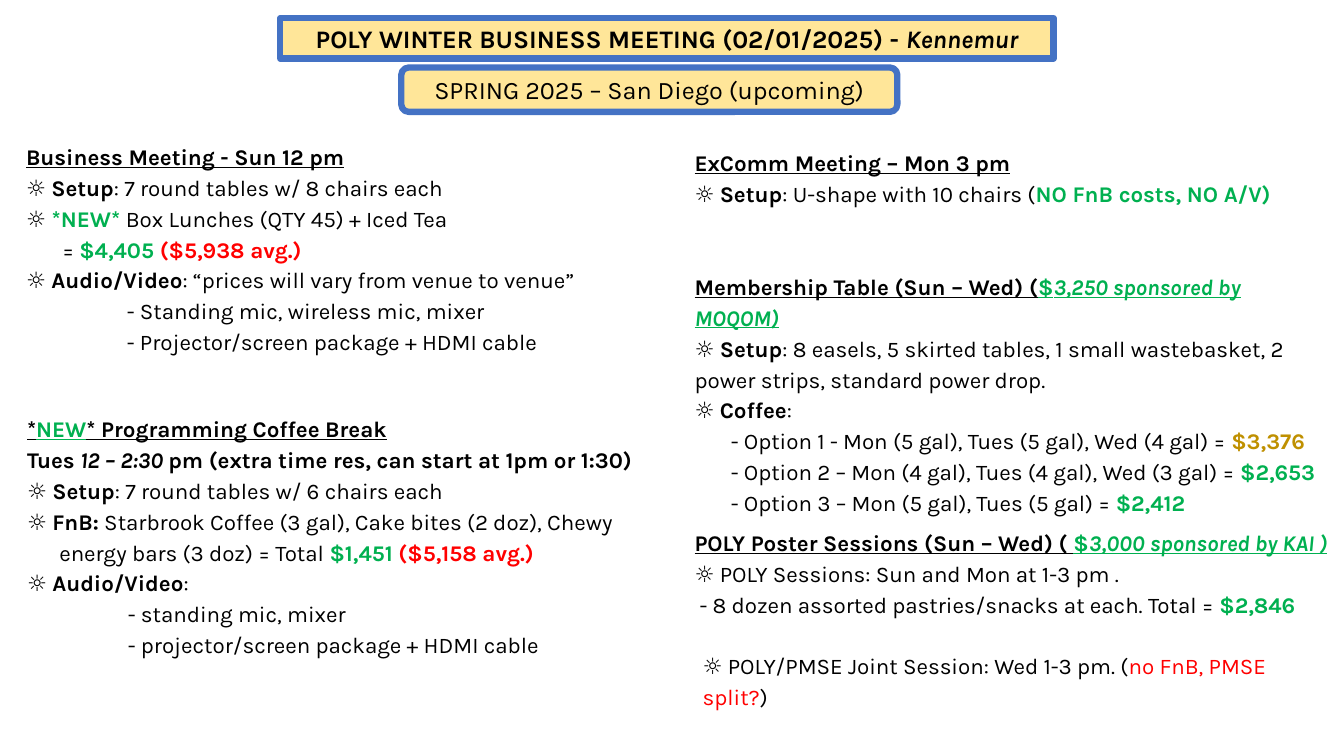
from lxml import etree
from pptx import Presentation
from pptx.dml.color import RGBColor
from pptx.enum.shapes import MSO_SHAPE
from pptx.enum.text import MSO_ANCHOR, MSO_AUTO_SIZE, PP_ALIGN
from pptx.oxml.ns import qn
from pptx.util import Inches, Pt

FONT = "Karla"
BLACK = RGBColor(0x00, 0x00, 0x00)
GREEN = RGBColor(0x00, 0xB0, 0x50)
RED = RGBColor(0xFF, 0x00, 0x00)
GOLD = RGBColor(0xBF, 0x90, 0x00)
CREAM = RGBColor(0xFF, 0xE6, 0x99)
BLUE = RGBColor(0x44, 0x72, 0xC4)

COST_INDENT = 0.36
WRAP_INDENT = 0.32
EQUIPMENT_INDENT = 1.0
SNACK_INDENT = 0.05
JOINT_INDENT = 0.08
SECTION_GAP = 22


def line(*runs, indent=0, before=0):
    """One line of a section; each run is (text, style letters b/i/u, colour)."""
    return runs, indent, before


def setup(details, *more_runs):
    return line(("☼ ", ""), ("Setup", "b"), (": " + details, ""), *more_runs)


def equipment(text):
    return line(("- " + text, ""), indent=EQUIPMENT_INDENT)


def coffee_option(text, price, colour=GREEN):
    return line((f"- {text} = ", ""), (price, "b", colour), indent=COST_INDENT)


BUSINESS_MEETING = [
    line(("Business Meeting - Sun 12 pm", "bu")),
    setup("7 round tables w/ 8 chairs each"),
    line(("☼ ", "b"), ("*NEW* ", "b", GREEN), ("Box Lunches (QTY 45) + Iced Tea", "")),
    line(("= ", ""), ("$4,405 ", "b", GREEN), ("($5,938 avg.)", "b", RED),
         indent=COST_INDENT),
    line(("☼ ", ""), ("Audio/Video", "b"),
         (": “prices will vary from venue to venue”", "")),
    equipment("Standing mic, wireless mic, mixer"),
    equipment("Projector/screen package + HDMI cable"),
]

COFFEE_BREAK = [
    line(("*", "bu"), ("NEW", "bu", GREEN), ("* Programming Coffee Break", "bu")),
    line(("Tues ", "b"), ("12 – 2:30 ", "bi"),
         ("pm (extra time res, can start at 1pm or 1:30)", "b")),
    setup("7 round tables w/ 6 chairs each"),
    line(("☼ ", ""), ("FnB:", "b"),
         (" Starbrook Coffee (3 gal), Cake bites (2 doz), Chewy", "")),
    line(("energy bars (3 doz) = Total ", ""), ("$1,451 ", "b", GREEN),
         ("($5,158 avg.)", "b", RED), indent=WRAP_INDENT),
    line(("☼ ", ""), ("Audio/Video", "b"), (":", "")),
    equipment("standing mic, mixer"),
    equipment("projector/screen package + HDMI cable"),
]

EXCOMM_MEETING = [
    line(("ExComm Meeting – Mon 3 pm", "bu")),
    setup("U-shape with 10 chairs (", ("NO FnB costs, NO A/V)", "b", GREEN)),
]

MEMBERSHIP_TABLE = [
    line(("Membership Table (Sun – Wed) (", "bu"), ("$", "bu", GREEN),
         ("3,250 sponsored by MOQOM)", "biu", GREEN)),
    setup("8 easels, 5 skirted tables, 1 small wastebasket, 2 power strips, "
          "standard power drop."),
    line(("☼ ", ""), ("Coffee", "b"), (":", "")),
    coffee_option("Option 1 - Mon (5 gal), Tues (5 gal), Wed (4 gal)", "$3,376", GOLD),
    coffee_option("Option 2 – Mon (4 gal), Tues (4 gal), Wed (3 gal)", "$2,653"),
    coffee_option("Option 3 – Mon (5 gal), Tues (5 gal)", "$2,412"),
]

POSTER_SESSIONS = [
    line(("POLY Poster Sessions (Sun – Wed) ( ", "bu"), ("$", "bu", GREEN),
         ("3,000 sponsored by KAI )", "biu", GREEN)),
    line(("☼ POLY Sessions: Sun and Mon at 1-3 pm .", "")),
    line(("- 8 dozen assorted pastries/snacks at each. Total = ", ""),
         ("$2,846", "b", GREEN), indent=SNACK_INDENT),
    line(("☼ POLY/PMSE Joint Session: Wed 1-3 pm. (", ""),
         ("no FnB, PMSE split?", "", RED), (")", ""),
         indent=JOINT_INDENT, before=SECTION_GAP),
]


def add_run(paragraph, size, text, style, colour=BLACK):
    run = paragraph.add_run()
    run.text = text
    font = run.font
    font.name, font.size, font.color.rgb = FONT, Pt(size), colour
    font.bold, font.italic, font.underline = (mark in style for mark in "biu")


def place(shape, left, top, width, height):
    shape.left, shape.top = Inches(left), Inches(top)
    shape.width, shape.height = Inches(width), Inches(height)


def round_corners(placeholder):
    """Give a placed placeholder the rounded rectangle outline."""
    geometry = etree.SubElement(placeholder.element.spPr, qn("a:prstGeom"),
                                prst="roundRect")
    etree.SubElement(geometry, qn("a:avLst"))


def format_banner(shape, *runs):
    shape.fill.solid()
    shape.fill.fore_color.rgb = CREAM
    shape.line.color.rgb = BLUE
    shape.line.width = Pt(4.5)
    frame = shape.text_frame
    frame.auto_size = MSO_AUTO_SIZE.NONE
    frame.word_wrap = True
    frame.vertical_anchor = MSO_ANCHOR.MIDDLE
    paragraph = frame.paragraphs[0]
    paragraph.alignment = PP_ALIGN.CENTER
    paragraph.line_spacing = 1.0
    paragraph.space_before = Pt(0)
    for run in runs:
        add_run(paragraph, 18, *run)


def add_section(slide, left, top, width, height, lines):
    box = slide.shapes.add_textbox(Inches(left), Inches(top),
                                   Inches(width), Inches(height))
    frame = box.text_frame
    frame.word_wrap = True
    frame.auto_size = MSO_AUTO_SIZE.SHAPE_TO_FIT_TEXT
    for number, (runs, indent, before) in enumerate(lines):
        paragraph = frame.add_paragraph() if number else frame.paragraphs[0]
        paragraph.line_spacing = 1.15
        paragraph.space_before = Pt(before)
        paragraph.space_after = Pt(0)
        if indent:
            paragraph._p.get_or_add_pPr().set("marL", str(Inches(indent)))
        for run in runs:
            add_run(paragraph, 16, *run)
    frame.paragraphs[0].space_before = Pt(8)
    frame.paragraphs[-1].space_after = Pt(8)


def main():
    deck = Presentation()
    deck.slide_width, deck.slide_height = Inches(13.33), Inches(7.5)
    slide = deck.slides.add_slide(deck.slide_layouts[5])

    title = slide.shapes.title
    place(title, 2.78, 0.18, 7.67, 0.4)
    round_corners(title)
    format_banner(title, ("POLY WINTER BUSINESS MEETING (02/01/2025) - ", "b"),
                  ("Kennemur", "bi"))

    venue = slide.shapes.add_shape(MSO_SHAPE.ROUNDED_RECTANGLE, Inches(3.98),
                                   Inches(0.67), Inches(4.92), Inches(0.44))
    venue.shadow.inherit = False
    format_banner(venue, ("SPRING 2025 – San Diego (upcoming)", ""))

    add_section(slide, 0.16, 1.33, 6.72, 2.25, BUSINESS_MEETING)
    add_section(slide, 0.17, 4.03, 6.27, 2.56, COFFEE_BREAK)
    add_section(slide, 6.79, 1.39, 6.07, 0.7, EXCOMM_MEETING)
    add_section(slide, 6.79, 2.62, 6.39, 2.25, MEMBERSHIP_TABLE)
    add_section(slide, 6.79, 5.16, 6.54, 1.63, POSTER_SESSIONS)

    deck.save("out.pptx")


if __name__ == "__main__":
    main()
